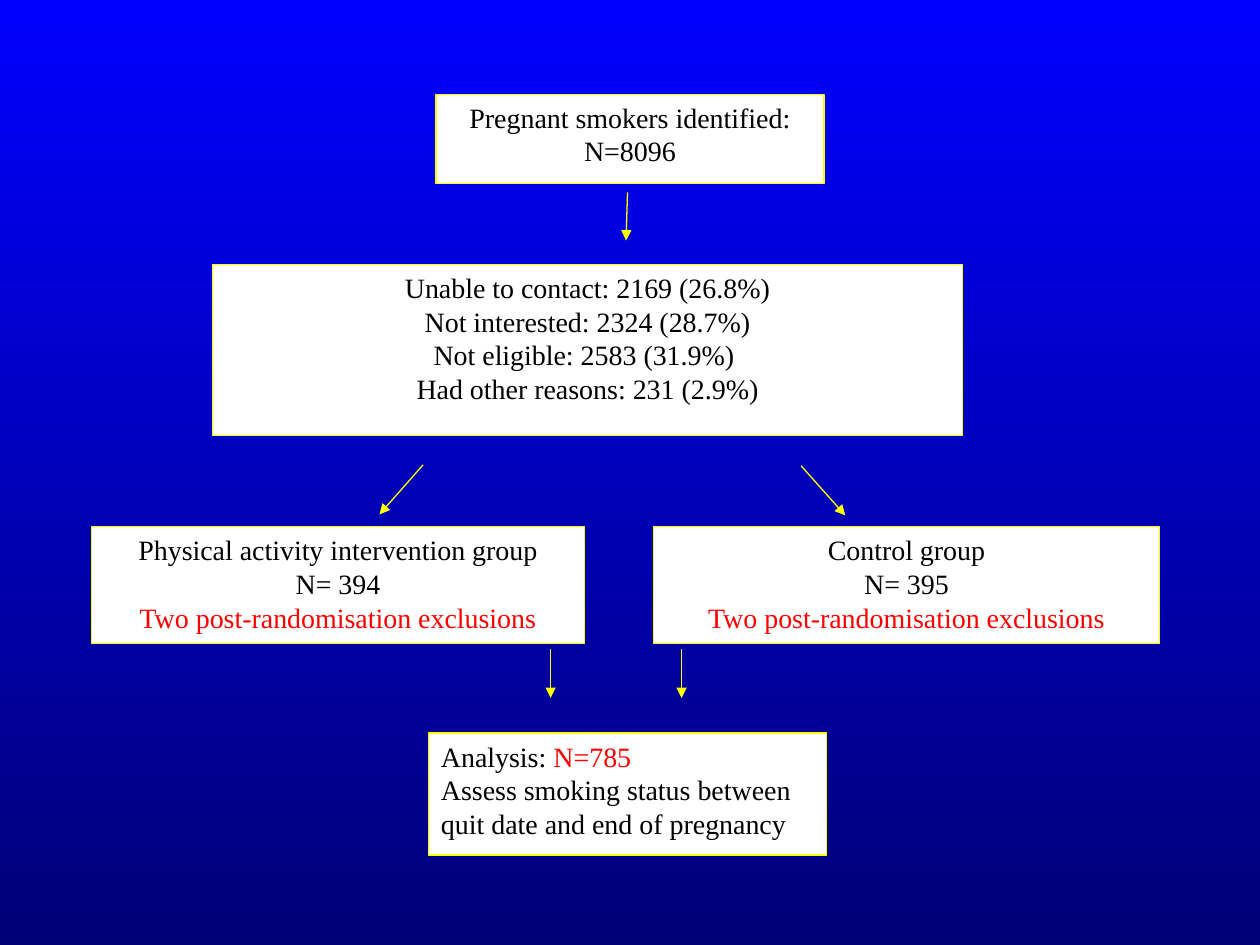
from lxml.etree import SubElement
from pptx import Presentation
from pptx.dml.color import RGBColor
from pptx.enum.shapes import MSO_CONNECTOR, MSO_SHAPE
from pptx.enum.text import MSO_ANCHOR, PP_ALIGN
from pptx.oxml.ns import qn
from pptx.util import Cm, Pt

COLORS = {
    "top": "0000FF",
    "bottom": "000076",
    "box": "FFFFFF",
    "line": "FFFF00",
    "text": "000000",
    "highlight": "FF0000",
}
FONT = "Times New Roman"
FONT_SIZE = Pt(16)
LINE_WIDTH = Pt(0.75)

GROUP_TOP, GROUP_HEIGHT = 10.62, 2.36
EXCLUSIONS = [("Two post-randomisation exclusions", "highlight")]

# Each box: left, top, width, height in cm, alignment, and paragraphs of (text, color) runs
BOXES = [
    (8.79, 1.9, 7.82, 1.8, PP_ALIGN.CENTER, [
        [("Pregnant smokers identified: N=8096", "text")],
    ]),
    (4.29, 5.33, 15.11, 3.45, PP_ALIGN.CENTER, [
        [("Unable to contact: 2169 (26.8%)", "text")],
        [("Not interested: 2324 (28.7%)", "text")],
        [("Not eligible: 2583 (31.9%) ", "text")],
        [("Had other reasons: 231 (2.9%)", "text")],
    ]),
    (1.85, GROUP_TOP, 9.93, GROUP_HEIGHT, PP_ALIGN.CENTER, [
        [("Physical activity intervention group", "text")],
        [("N= 394", "text")],
        EXCLUSIONS,
    ]),
    (13.18, GROUP_TOP, 10.19, GROUP_HEIGHT, PP_ALIGN.CENTER, [
        [("Control group", "text")],
        [("N= 395", "text")],
        EXCLUSIONS,
    ]),
    (8.64, 14.78, 8.03, 2.46, PP_ALIGN.LEFT, [
        [("Analysis: ", "text"), ("N=785", "highlight")],
        [("Assess smoking status between quit date and end of pregnancy", "text")],
    ]),
]

# Each arrow: start x, start y, end x, end y in cm
ARROWS = [
    (12.65, 3.88, 12.62, 4.85),
    (8.53, 9.37, 7.65, 10.37),
    (16.15, 9.39, 17.04, 10.39),
    (11.1, 13.08, 11.1, 14.07),
    (13.74, 13.08, 13.74, 14.07),
]


def color(name):
    return RGBColor.from_string(COLORS[name])


def style_line(line):
    line.color.rgb = color("line")
    line.width = LINE_WIDTH


def set_background(slide):
    fill = slide.background.fill
    fill.gradient()
    fill.gradient_angle = 270
    for stop, name in zip(fill.gradient_stops, ("top", "bottom")):
        stop.color.rgb = color(name)


def add_box(slide, left, top, width, height, alignment, paragraphs):
    shape = slide.shapes.add_shape(
        MSO_SHAPE.RECTANGLE, Cm(left), Cm(top), Cm(width), Cm(height))
    shape.shadow.inherit = False
    shape.fill.solid()
    shape.fill.fore_color.rgb = color("box")
    style_line(shape.line)

    text_frame = shape.text_frame
    text_frame.word_wrap = True
    text_frame.vertical_anchor = MSO_ANCHOR.TOP
    for index, runs in enumerate(paragraphs):
        paragraph = text_frame.add_paragraph() if index else text_frame.paragraphs[0]
        paragraph.alignment = alignment
        for text, color_name in runs:
            run = paragraph.add_run()
            run.text = text
            run.font.name = FONT
            run.font.size = FONT_SIZE
            run.font.color.rgb = color(color_name)


def add_arrow(slide, *ends):
    arrow = slide.shapes.add_connector(MSO_CONNECTOR.STRAIGHT, *map(Cm, ends))
    style_line(arrow.line)
    SubElement(arrow.line._get_or_add_ln(), qn("a:tailEnd"), type="triangle")
    SubElement(arrow._element.spPr, qn("a:effectLst"))


def main():
    presentation = Presentation()
    presentation.slide_width, presentation.slide_height = Cm(25.4), Cm(19.05)
    slide = presentation.slides.add_slide(presentation.slide_layouts[6])
    set_background(slide)
    for box in BOXES:
        add_box(slide, *box)
    for arrow in ARROWS:
        add_arrow(slide, *arrow)
    presentation.save("out.pptx")


if __name__ == "__main__":
    main()
